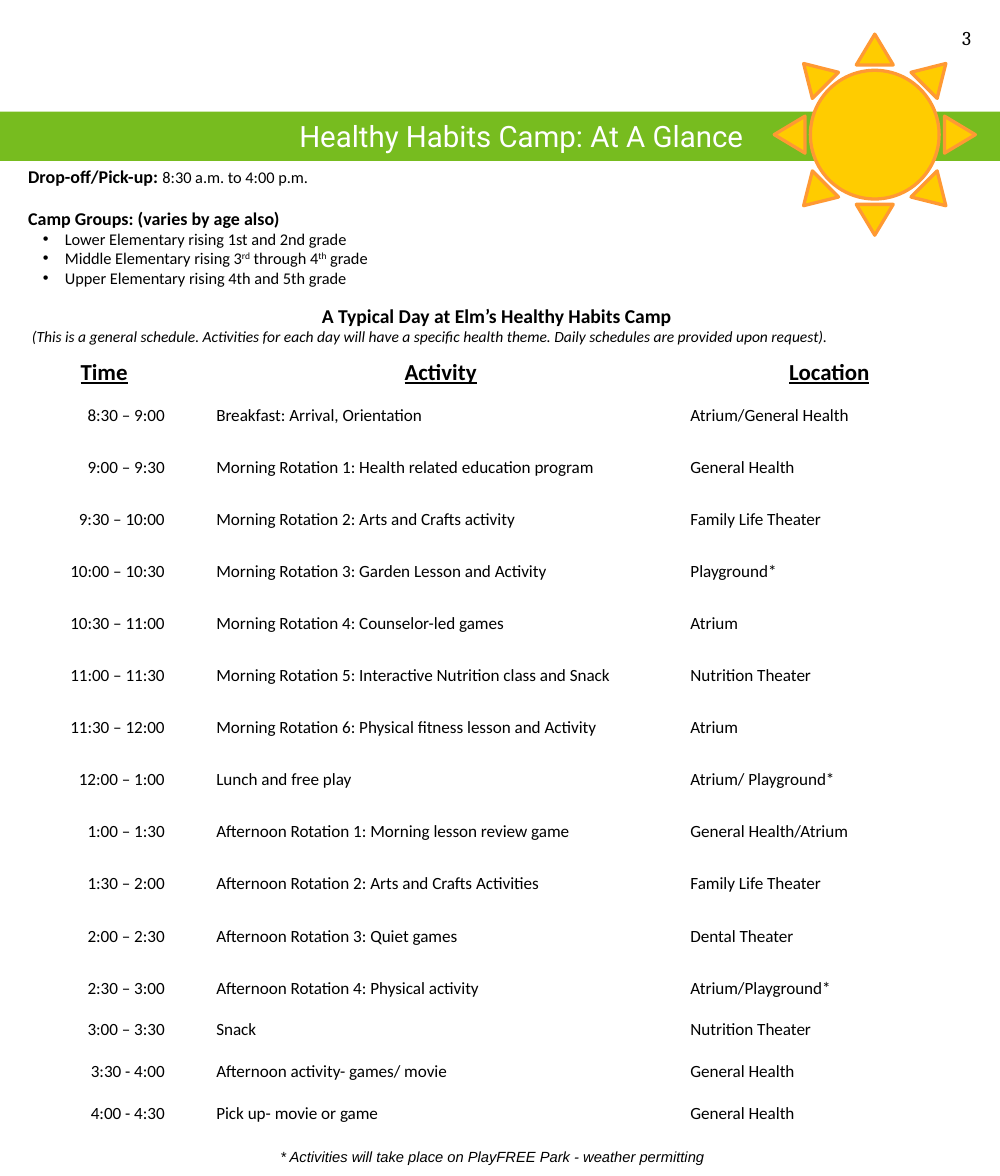
from dataclasses import dataclass

from lxml import etree
from pptx import Presentation
from pptx.dml.color import RGBColor
from pptx.enum.shapes import MSO_SHAPE
from pptx.enum.text import MSO_ANCHOR, MSO_AUTO_SIZE, PP_ALIGN
from pptx.oxml.ns import qn
from pptx.util import Pt

LEFT, MID, RIGHT = PP_ALIGN.LEFT, PP_ALIGN.CENTER, PP_ALIGN.RIGHT
RECT, SUN = MSO_SHAPE.RECTANGLE, MSO_SHAPE.SUN
TOP = MSO_ANCHOR.TOP
GROW = MSO_AUTO_SIZE.SHAPE_TO_FIT_TEXT


@dataclass(frozen=True)
class Theme:
    """Colours, fonts and type sizes."""
    ink: str = "000000"
    white: str = "FFFFFF"
    green: str = "77BC1F"
    gold: str = "FFCC00"
    edge: str = "FF9933"
    main: str = "Calibri"
    head: str = "Roboto"
    note: str = "Arial"
    page: str = "Cambria"
    title: float = 18
    column: float = 14
    day: float = 12
    label: float = 11
    cell: float = 10.5
    body: float = 10
    hint: float = 9.5
    foot: float = 9


THEME = Theme()

GROUPS = [
    [("Lower Elementary rising 1st and 2nd grade", 0)],
    [("Middle Elementary rising 3", 0), ("rd", 30), (" through 4", 0),
     ("th", 30), (" grade", 0)],
    [("Upper Elementary rising 4th and 5th grade", 0)],
]
HEADS = [("Time", 0), ("Activity", 16), ("Location", 0)]
PLAN = [
    ("8:30 – 9:00", "Breakfast: Arrival, Orientation", "Atrium/General Health"),
    ("9:00 – 9:30", "Morning Rotation 1: Health related education program", "General Health"),
    ("9:30 – 10:00", "Morning Rotation 2: Arts and Crafts activity", "Family Life Theater"),
    ("10:00 – 10:30", "Morning Rotation 3: Garden Lesson and Activity", "Playground*"),
    ("10:30 – 11:00", "Morning Rotation 4: Counselor-led games", "Atrium"),
    ("11:00 – 11:30", "Morning Rotation 5: Interactive Nutrition class and Snack",
     "Nutrition Theater"),
    ("11:30 – 12:00", "Morning Rotation 6: Physical fitness lesson and Activity", "Atrium"),
    ("12:00 – 1:00", "Lunch and free play", "Atrium/ Playground*"),
    ("1:00 – 1:30", "Afternoon Rotation 1: Morning lesson review game", "General Health/Atrium"),
    ("1:30 – 2:00", "Afternoon Rotation 2: Arts and Crafts Activities", "Family Life Theater"),
    ("2:00 – 2:30", "Afternoon Rotation 3: Quiet games", "Dental Theater"),
]
CLOSE = [
    ("2:30 – 3:00", "Afternoon Rotation 4: Physical activity", "Atrium/Playground*"),
    ("3:00 – 3:30", "Snack", "Nutrition Theater"),
    ("3:30 - 4:00", "Afternoon activity- games/ movie", "General Health"),
    ("4:00 - 4:30", "Pick up- movie or game", "General Health"),
]


def write(par, text, size=THEME.body, face=THEME.main, color=THEME.ink,
          bold=False, italic=False, line=False, base=0):
    """Add a formatted run to a paragraph."""
    run = par.add_run()
    run.text = text
    font = run.font
    font.size, font.name = Pt(size), face
    font.bold, font.italic, font.underline = bold, italic, line
    font.color.rgb = RGBColor.from_string(color)
    if base:
        run._r.get_or_add_rPr().set("baseline", str(base * 1000))


def start(frame, align=LEFT, before=0, left=0, hang=0, bullet=None):
    """Open a paragraph, using the frame's first one if it is empty."""
    par = frame.paragraphs[-1]
    if par.runs:
        par = frame.add_paragraph()
    par.alignment, par.line_spacing = align, 1.0
    par.space_before, par.space_after = Pt(before), Pt(0)
    props = par._p.get_or_add_pPr()
    props.set("marL", str(Pt(left)))
    props.set("indent", str(Pt(hang)))
    mark = etree.SubElement(props, qn("a:buChar" if bullet else "a:buNone"))
    if bullet:
        mark.set("char", bullet)
    return par


def place(shape, x, y, w, h):
    """Move a text shape to the front and return its frame."""
    shape.left, shape.top, shape.width, shape.height = Pt(x), Pt(y), Pt(w), Pt(h)
    shape.element.getparent().append(shape.element)
    frame = shape.text_frame
    frame.word_wrap, frame.auto_size = True, GROW
    frame.vertical_anchor = TOP
    return frame


def add_box(slide, x, y, w, h):
    """Add a wrapping text box and return its frame."""
    return place(slide.shapes.add_textbox(0, 0, 0, 0), x, y, w, h)


def add_form(slide, kind, x, y, w, h, fill, edge=None):
    """Add a filled preset shape."""
    form = slide.shapes.add_shape(kind, Pt(x), Pt(y), Pt(w), Pt(h))
    form.shadow.inherit = False
    form.fill.solid()
    form.fill.fore_color.rgb = RGBColor.from_string(fill)
    if edge:
        form.line.color.rgb = RGBColor.from_string(edge)
        form.line.width = Pt(2)
    else:
        form.line.fill.background()
    return form


def fill_body(frame):
    """Write the camp hours, the groups and the schedule heading."""
    par = start(frame)
    write(par, "Drop-off/Pick-up: ", size=THEME.label, bold=True)
    write(par, "8:30 a.m. to 4:00 p.m.")
    par = start(frame, before=12)
    write(par, "Camp Groups: (varies by age also)", size=THEME.label, bold=True)
    for group in GROUPS:
        par = start(frame, left=22.5, hang=-13.5, bullet="•")
        for text, base in group:
            write(par, text, base=base)
    par = start(frame, align=MID, before=9.8)
    write(par, "A Typical Day at Elm’s Healthy Habits Camp", size=THEME.day, bold=True)
    par = start(frame, left=2.3)
    write(par, "(This is a general schedule. Activities for each day will have a "
          "specific health theme. Daily schedules are provided upon request).",
          size=THEME.hint, italic=True)


def add_plan(slide):
    """Add the day's table, with the closing activities in its last row."""
    widths, step, last = (84.2, 311.8, 180), 31.9, 90
    rows = [[item] for item in PLAN] + [CLOSE]
    table = slide.shapes.add_table(
        len(rows) + 1, len(widths), Pt(21.6), Pt(216), Pt(sum(widths)),
        Pt(step * len(rows) + last)).table
    table.first_row = table.horz_banding = False
    for col, width in zip(table.columns, widths):
        col.width = Pt(width)
    for row in table.rows:
        row.height = Pt(step)
    table.rows[len(rows)].height = Pt(last)
    for cell in table.iter_cells():
        cell.fill.background()
    for col, (text, left) in enumerate(HEADS):
        par = start(table.cell(0, col).text_frame, align=MID, left=left)
        write(par, text, size=THEME.column, bold=True, line=True)
    for row, items in enumerate(rows, 1):
        for col, (align, left) in enumerate([(RIGHT, 0), (LEFT, 21.6), (LEFT, 0)]):
            cell = table.cell(row, col)
            cell.margin_left = cell.margin_right = Pt(5)
            cell.margin_top = cell.margin_bottom = 0
            for order, item in enumerate(items):
                par = start(cell.text_frame, align=align, left=left,
                            before=12.8 if order else 0)
                write(par, item[col], size=THEME.cell)


def main():
    """Build the camp schedule slide."""
    deck = Presentation()
    deck.slide_width, deck.slide_height = Pt(612), Pt(720)
    slide = deck.slides.add_slide(deck.slide_layouts[1])
    add_form(slide, RECT, 0, 68.4, 612, 30.2, THEME.green)
    sun = add_form(slide, SUN, 473.8, 20.9, 123.1, 123.1, THEME.gold, THEME.edge)
    sun.adjustments[0] = 0.18
    title = place(slide.shapes.title, 0, 68.4, 462.2, 28.8)
    write(start(title, align=RIGHT), "Healthy Habits Camp: At A Glance",
          size=THEME.title, face=THEME.head, color=THEME.white)
    fill_body(place(slide.placeholders[1], 10, 98, 588.2, 131))
    add_plan(slide)
    foot = add_box(slide, 19.4, 699, 563.8, 18)
    write(start(foot, align=MID),
          "* Activities will take place on PlayFREE Park - weather permitting",
          size=THEME.foot, face=THEME.note, italic=True)
    page = add_box(slide, 581.8, 12.2, 22, 21.6)
    write(start(page), "3", size=THEME.day, face=THEME.page)
    deck.save("out.pptx")


if __name__ == "__main__":
    main()
